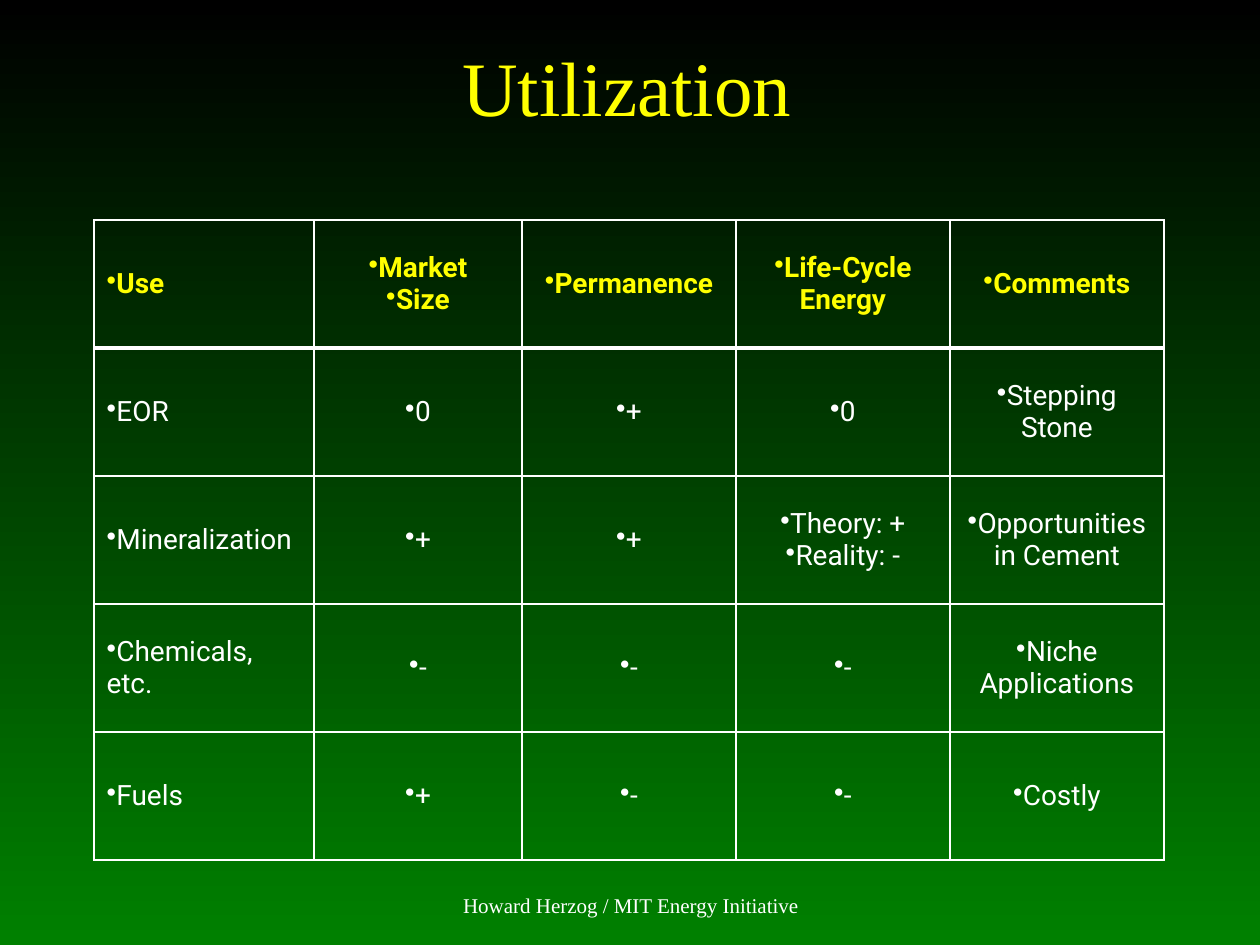
from lxml import etree
from pptx import Presentation
from pptx.dml.color import RGBColor
from pptx.enum.text import MSO_ANCHOR, PP_ALIGN
from pptx.oxml.ns import qn
from pptx.util import Emu, Pt

LEFT, CENTER = PP_ALIGN.LEFT, PP_ALIGN.CENTER
MIDDLE, BOTTOM = MSO_ANCHOR.MIDDLE, MSO_ANCHOR.BOTTOM
SCALE = 914400 / 126
WHITE, YELLOW = "FFFFFF", "FFFF00"
SERIF, SANS = "Times New Roman", "Roboto"
COLS = [220, 208, 214, 214, 214]
ROW = 128
ROWS = [
    ["Use", "Market\nSize", "Permanence", "Life-Cycle Energy", "Comments"],
    ["EOR", "0", "+", "0", "Stepping Stone"],
    ["Mineralization", "+", "+", "Theory: +\nReality: -", "Opportunities in Cement"],
    ["Chemicals, etc.", "-", "-", "-", "Niche Applications"],
    ["Fuels", "+", "-", "-", "Costly"],
]


def px(n):
    return Emu(round(n * SCALE))


def paint(color, code):
    color.rgb = RGBColor.from_string(code)


def style(para, face, size, code, align, bold=False):
    para.alignment = align
    for run in para.runs:
        font = run.font
        font.name, font.size, font.bold = face, Pt(size), bold
        paint(font.color, code)


def back(slide):
    fill = slide.background.fill
    fill.gradient()
    fill.gradient_angle = 270
    for stop, code in zip(fill.gradient_stops, ["000000", "008000"]):
        paint(stop.color, code)


def title(slide, text):
    shape = slide.shapes.title
    shape.left, shape.top, shape.width, shape.height = map(px, (93, 24, 1068, 123))
    frame = shape.text_frame
    frame.text = text
    frame.vertical_anchor = MIDDLE
    style(frame.paragraphs[0], SERIF, 44, YELLOW, CENTER)


def footer(slide, text):
    box = slide.shapes.add_textbox(*map(px, (431, 861, 400, 63)))
    frame = box.text_frame
    frame.text = text
    frame.word_wrap = False
    frame.vertical_anchor = BOTTOM
    style(frame.paragraphs[0], SERIF, 12, WHITE, CENTER)


def bullet(para):
    props = para._p.get_or_add_pPr()
    props.set("marL", "0")
    props.set("indent", "0")
    etree.SubElement(props, qn("a:buChar")).set("char", "•")


def border(cell, side, width):
    props = cell._tc.get_or_add_tcPr()
    line = etree.SubElement(props, qn("a:ln" + side), w=str(Pt(width)))
    fill = etree.SubElement(line, qn("a:solidFill"))
    etree.SubElement(fill, qn("a:srgbClr"), val=WHITE)


def fill_cell(cell, text, row, col):
    thick = {(0, "B"), (1, "T")}
    for side in "LRTB":
        border(cell, side, 3 if (row, side) in thick else 1)
    cell.fill.background()
    cell.vertical_anchor = MIDDLE
    cell.text_frame.text = text
    head = row == 0
    for para in cell.text_frame.paragraphs:
        bullet(para)
        style(para, SANS, 16, YELLOW if head else WHITE,
              CENTER if col else LEFT, head)


def grid(slide):
    size = (94, 220, sum(COLS), ROW * len(ROWS))
    table = slide.shapes.add_table(len(ROWS), len(COLS), *map(px, size)).table
    table.first_row = table.horz_banding = False
    for col, width in zip(table.columns, COLS):
        col.width = px(width)
    for r, texts in enumerate(ROWS):
        table.rows[r].height = px(ROW)
        for c, text in enumerate(texts):
            fill_cell(table.cell(r, c), text, r, c)


def main():
    deck = Presentation()
    deck.slide_width, deck.slide_height = px(1260), px(945)
    slide = deck.slides.add_slide(deck.slide_layouts[5])
    back(slide)
    title(slide, "Utilization")
    footer(slide, "Howard Herzog / MIT Energy Initiative")
    grid(slide)
    deck.save("out.pptx")


if __name__ == "__main__":
    main()
